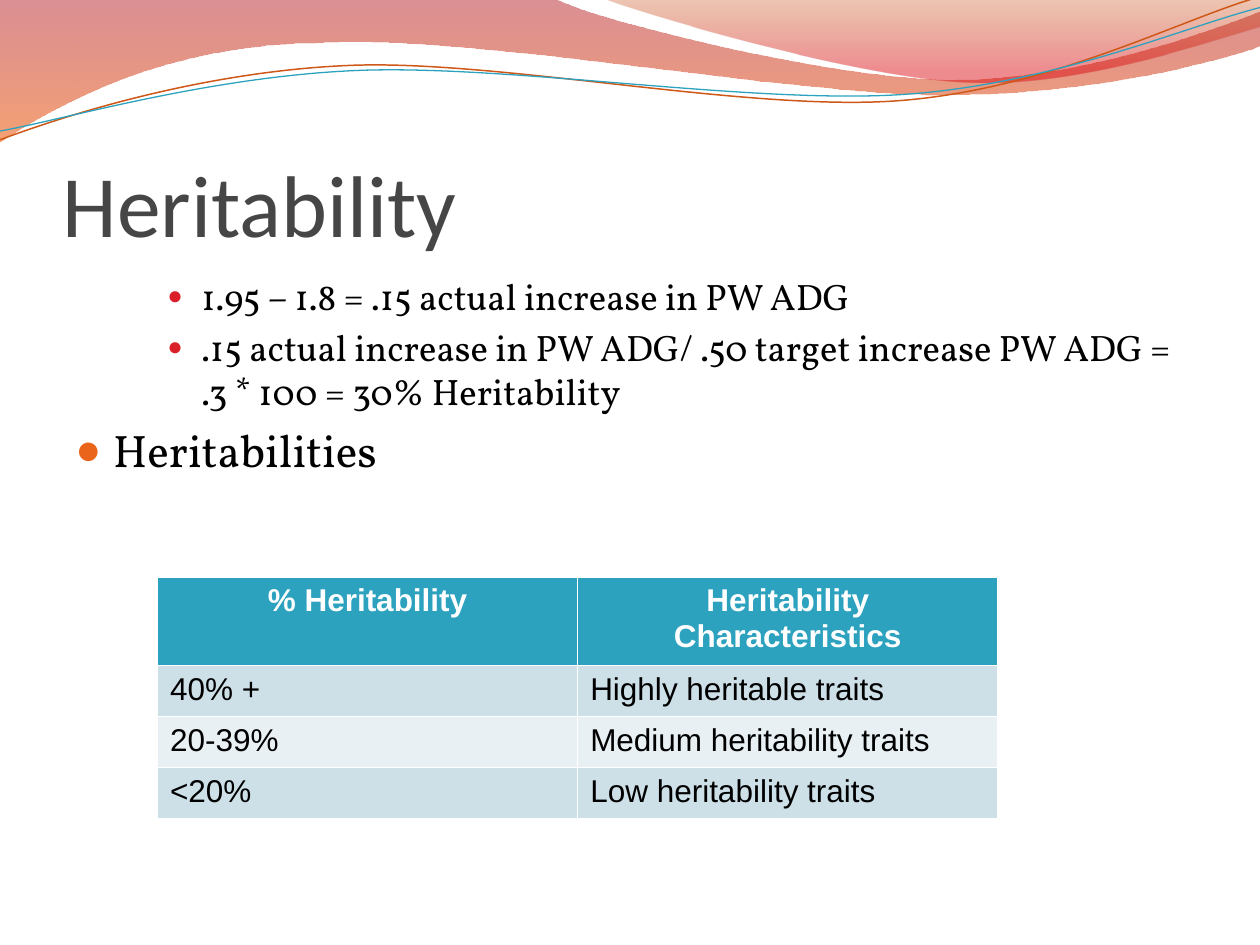
from lxml import etree
from pptx import Presentation
from pptx import util as u
from pptx.dml.color import RGBColor
from pptx.enum import text
from pptx.oxml import parse_xml
from pptx.oxml.ns import nsdecls, qn

COLORS = {
    "crimson": "AF0911", "orange": "EE5300", "rust": "C24400", "red": "DC000B",
    "orange_line": "CF5818", "teal": "2DA2BF", "title": "464646", "ink": "000000",
    "white": "FFFFFF", "sub_bullet": "DA1F28", "main_bullet": "EB641B",
    "band_dark": "CDE0E8", "band_light": "E8F0F4",
}
GRID = 10
WAVE_FILLS = [
    ([(0, -.01)], [(4.4, -.01)], [(4.76, .17), (6.64, .63), (7.58, .63)],
     [(8.53, .63), (9.58, .26), (10, .09)], [(10.01, .36)],
     [(9.83, .44), (8.7, .76), (7.46, .75)], [(6.22, .75), (3.82, .28), (2.57, .34)],
     [(1.29, .35), (.46, .83), (-.01, 1.13)], [(0, -.01)]),
    ([(4.79, -.01)], [(5.09, .11), (6.82, .62), (7.69, .65)],
     [(8.56, .69), (9.61, .32), (10, .21)], [(10, 0)], [(4.79, -.01)]),
]
WAVE_STOPS = [
    [(0, "crimson", 45), (100, "orange", 55)],
    [(0, "rust", 30), (80, "red", 45)],
]
WAVE_LINES = [
    (([(0, 1.11)], [(.48, .93), (1.58, .57), (2.77, .52)], [(3.95, .47), (5.93, .89), (7.13, .8)],
      [(8.33, .71), (9.38, .15), (9.98, -.02)]), "orange_line", .85),
    (([(0, 1.04)], [(.47, .96), (1.64, .61), (2.83, .56)], [(4.03, .51), (5.97, .83), (7.17, .75)],
      [(8.36, .67), (9.41, .21), (10, .06)]), "teal", .75),
]
POINTS = [
    ("1.95 – 1.8 = .15 actual increase in PW ADG", 2),
    (".15 actual increase in PW ADG/ .50 target increase PW ADG = .3 * 100 = 30% Heritability", 2),
    ("Heritabilities", 0),
]
LEVELS = {0: (26, .3, -.3, "main_bullet", 95), 2: (21, 1, -.27, "sub_bullet", 70)}
TRAITS = [
    ("% Heritability", "Heritability Characteristics"),
    ("40% +", "Highly heritable traits"),
    ("20-39%", "Medium heritability traits"),
    ("<20%", "Low heritability traits"),
]


def rgb(name):
    """Return the named colour."""
    return RGBColor.from_string(COLORS[name])


def style_font(font, face, size, color, bold=False):
    """Set face, size, colour and weight of a font."""
    font.name, font.size, font.bold = face, u.Pt(size), bold
    font.color.rgb = rgb(color)


def bend(wave, segments):
    """Join each run of three vertices into one cubic curve."""
    vertices = iter(list(wave._element.iter(qn("a:lnTo"))))
    for segment in segments:
        steps = [next(vertices) for _ in segment]
        if len(steps) == 3:
            curve = etree.Element(qn("a:cubicBezTo"))
            steps[0].addprevious(curve)
            for step in steps:
                curve.append(step[0])
                step.getparent().remove(step)


def add_wave(slide, box, outline, close):
    """Draw one wave, measured in tenths of the box width."""
    left, top, width, _ = box
    unit = width / GRID
    points = [(round(left + x * unit), round(top + y * unit))
              for segment in outline for x, y in segment]
    builder = slide.shapes.build_freeform(*points[0])
    builder.add_line_segments(points[1:], close=close)
    wave = builder.convert_to_shape()
    bend(wave, outline[1:])
    wave.shadow.inherit = False
    return wave


def set_gradient(shape, stops):
    """Fill a shape with a translucent top-to-bottom gradient."""
    shape.fill.gradient()
    gradient = shape._element.spPr.find(qn("a:gradFill"))
    marks = "".join(
        f'<a:gs pos="{pos * 1000}"><a:srgbClr val="{COLORS[color]}">'
        f'<a:alpha val="{alpha * 1000}"/></a:srgbClr></a:gs>' for pos, color, alpha in stops)
    gradient.getparent().replace(gradient, parse_xml(
        f'<a:gradFill {nsdecls("a")} rotWithShape="1"><a:gsLst>{marks}</a:gsLst>'
        '<a:lin ang="5400000" scaled="0"/></a:gradFill>'))


def draw_waves(slide, box):
    """Place the filled waves and the two thin lines over them."""
    for outline, stops in zip(WAVE_FILLS, WAVE_STOPS):
        wave = add_wave(slide, box, outline, True)
        set_gradient(wave, stops)
        wave.line.fill.background()
    for outline, color, weight in WAVE_LINES:
        wave = add_wave(slide, box, outline, False)
        wave.fill.background()
        wave.line.color.rgb = rgb(color)
        wave.line.width = u.Pt(weight)


def draw_title(slide, box):
    """Place the heading at the bottom of its box."""
    frame = slide.shapes.add_textbox(*box).text_frame
    frame.word_wrap = True
    frame.vertical_anchor = text.MSO_ANCHOR.BOTTOM
    frame.margin_left = frame.margin_right = frame.margin_bottom = 0
    frame.text = "Heritability"
    style_font(frame.paragraphs[0].runs[0].font, "Calibri", 50, "title")


def set_bullet(paragraph, margin, indent, color, size):
    """Give a paragraph a hanging round bullet."""
    props = paragraph._p.get_or_add_pPr()
    props.set("marL", str(u.Inches(margin)))
    props.set("indent", str(u.Inches(indent)))
    bullet_color = etree.SubElement(props, qn("a:buClr"))
    etree.SubElement(bullet_color, qn("a:srgbClr"), val=COLORS[color])
    etree.SubElement(props, qn("a:buSzPct"), val=str(size * 1000))
    etree.SubElement(props, qn("a:buFont"), typeface="Arial")
    etree.SubElement(props, qn("a:buChar"), char="●")


def draw_points(slide, box):
    """Place the bulleted calculation and the table's lead-in."""
    frame = slide.shapes.add_textbox(*box).text_frame
    frame.word_wrap = True
    frame.text = "\n".join(wording for wording, _ in POINTS)
    for paragraph, (_, level) in zip(frame.paragraphs, POINTS):
        size, *bullet = LEVELS[level]
        paragraph.level = level
        paragraph.space_before = u.Pt(size * .2)
        set_bullet(paragraph, *bullet)
        style_font(paragraph.runs[0].font, "Vollkorn", size, "ink")


def draw_traits(slide, box):
    """Place the table of heritability classes."""
    table = slide.shapes.add_table(len(TRAITS), len(TRAITS[0]), *box).table
    for row, wordings in enumerate(TRAITS):
        header = row == 0
        band = "teal" if header else "band_dark" if row % 2 else "band_light"
        for column, wording in enumerate(wordings):
            cell = table.cell(row, column)
            cell.text = wording
            cell.fill.solid()
            cell.fill.fore_color.rgb = rgb(band)
            paragraph = cell.text_frame.paragraphs[0]
            paragraph.alignment = text.PP_ALIGN.CENTER if header else text.PP_ALIGN.LEFT
            style_font(paragraph.runs[0].font, "Arial", 18, "white" if header else "ink", header)


def main():
    """Build and save the slide."""
    deck = Presentation()
    deck.slide_width, deck.slide_height = u.Inches(10), u.Inches(7.5)
    slide = deck.slides.add_slide(deck.slide_layouts[6])
    unit = deck.slide_width / GRID

    def area(*lengths):
        """Convert grid units to slide lengths."""
        return [round(length * unit) for length in lengths]

    draw_waves(slide, area(0, 0, 10, 7.5))
    draw_title(slide, area(.5, .77, 9, 1.25))
    draw_points(slide, area(.5, 2.12, 9, 4.8))
    draw_traits(slide, area(1.25, 4.58, 6.67, 1.62))
    deck.save("out.pptx")


if __name__ == "__main__":
    main()
